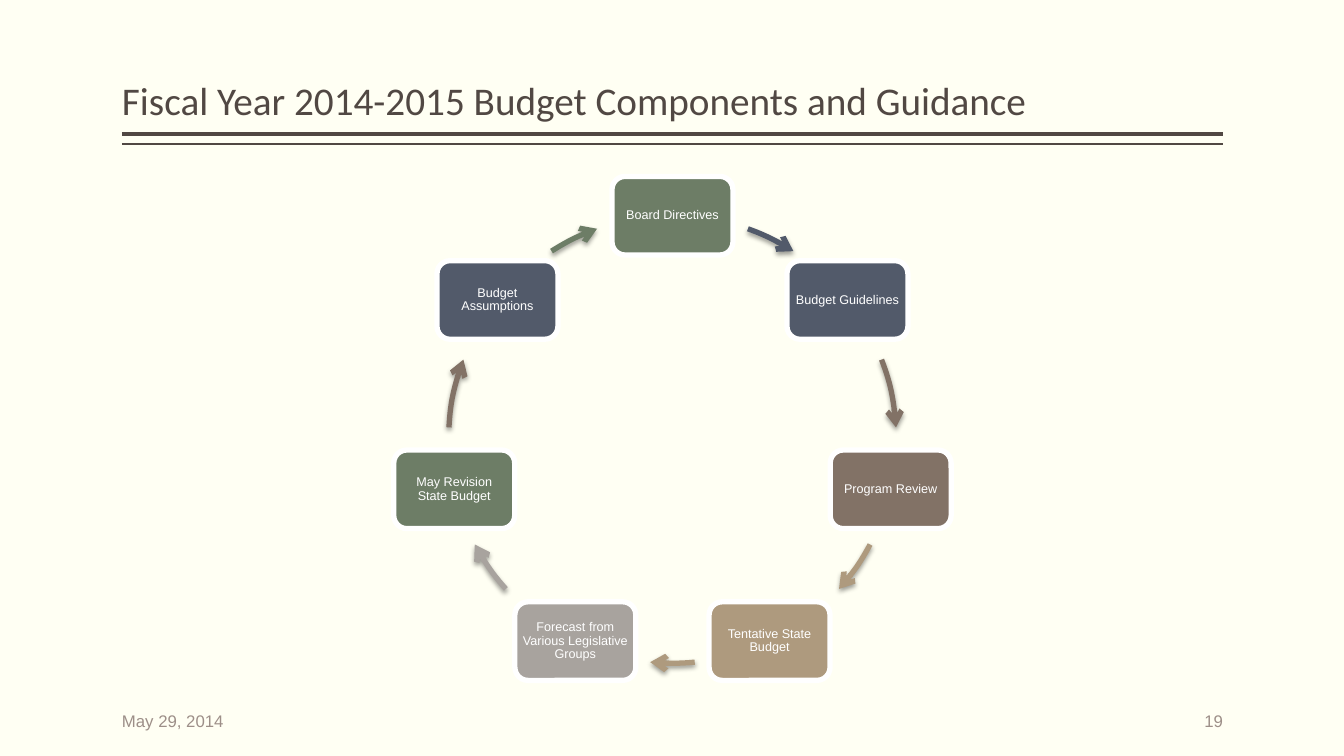
"""Build the budget components slide: a cycle of seven steps joined by arc arrows."""
from dataclasses import dataclass
from math import cos, radians, sin

from lxml import etree
from pptx import Presentation
from pptx.dml.color import RGBColor
from pptx.enum import shapes, text
from pptx.oxml import ns
from pptx.util import Inches, Pt


@dataclass(frozen=True)
class Theme:
    background: str = "FFFFF3"
    dark: str = "514843"
    muted: str = "9D8F88"
    white: str = "FFFFFF"
    shadow: str = "000000"
    green: str = "6D7D66"
    slate: str = "525A6A"
    brown: str = "827266"
    tan: str = "AE9A7E"
    grey: str = "A8A39E"
    heading_font: str = "Calibri"
    body_font: str = "Arial"
    title_size: float = 28
    footer_size: float = 12
    step_size: float = 9
    outline: float = 3.78


theme = Theme()
rgb = RGBColor.from_string


def write(s, words, font, size, color, align, anchor, margins, spacing=None):
    """Put one styled paragraph into a shape."""
    tf = s.text_frame
    tf.word_wrap = True
    tf.vertical_anchor = anchor
    tf.margin_left = tf.margin_right = Inches(margins[0])
    tf.margin_top = tf.margin_bottom = Inches(margins[1])
    p = tf.paragraphs[0]
    p.text = words
    p.alignment = align
    p.line_spacing = spacing
    p.font.name, p.font.size, p.font.color.rgb = font, Pt(size), rgb(color)


def add_sub(parent, tag, **attributes):
    """Append a DrawingML element with attributes."""
    return etree.SubElement(parent, ns.qn(tag), attributes)


prs = Presentation()
prs.slide_width, prs.slide_height = Inches(13.33), Inches(7.5)
slide = prs.slides.add_slide(prs.slide_layouts[6])
slide.background.fill.solid()
slide.background.fill.fore_color.rgb = rgb(theme.background)

left, right = 1.21, 12.13
for y, weight in ((1.33, 3), (1.43, 1)):
    rule = slide.shapes.add_connector(
        shapes.MSO_CONNECTOR.STRAIGHT, Inches(left), Inches(y), Inches(right), Inches(y))
    rule.line.color.rgb = rgb(theme.dark)
    rule.line.width = Pt(weight)
    add_sub(rule._element.spPr, "a:effectLst")

title = slide.shapes.add_textbox(Inches(left), Inches(0.08), Inches(right - left), Inches(1.2))
write(title, "Fiscal Year 2014-2015 Budget Components and Guidance", theme.heading_font,
      theme.title_size, theme.dark, text.PP_ALIGN.LEFT, text.MSO_ANCHOR.BOTTOM, (0, 0.05), 0.9)

center_x, center_y, radius = 6.67, 4.36, 2.22
box_width, box_height = 1.2, 0.78
steps = [
    ("Board Directives", theme.green),
    ("Budget Guidelines", theme.slate),
    ("Program Review", theme.brown),
    ("Tentative State Budget", theme.tan),
    ("Forecast from Various Legislative Groups", theme.grey),
    ("May Revision State Budget", theme.green),
    ("Budget Assumptions", theme.slate),
]
for i, (label, color) in enumerate(steps):
    angle = radians(360 / len(steps) * i)
    x = center_x + radius * sin(angle) - box_width / 2
    y = center_y - radius * cos(angle) - box_height / 2
    box = slide.shapes.add_shape(shapes.MSO_SHAPE.ROUNDED_RECTANGLE, Inches(x), Inches(y),
                                 Inches(box_width), Inches(box_height))
    box.shadow.inherit = False
    box.fill.solid()
    box.fill.fore_color.rgb = rgb(color)
    box.line.color.rgb = rgb(theme.white)
    box.line.width = Pt(theme.outline)
    write(box, label, theme.body_font, theme.step_size, theme.white, text.PP_ALIGN.CENTER,
          text.MSO_ANCHOR.MIDDLE, (0.04, 0.04), 0.9)

right_spans = [(19.7, 32.7), (69.1, 86.9), (118, 131.9)]
left_spans = [(360 - end, 360 - start) for start, end in reversed(right_spans)]
spans = right_spans + [(174.3, 185.7)] + left_spans
arrow_colors = [theme.slate, theme.brown, theme.tan, theme.tan,
                theme.grey, theme.brown, theme.green]
for span, color in zip(spans, arrow_colors):
    arrow = slide.shapes.add_shape(
        shapes.MSO_SHAPE.ARC, Inches(center_x - radius), Inches(center_y - radius),
        Inches(2 * radius), Inches(2 * radius))
    for i, degrees in enumerate(span):
        arrow.adjustments[i] = (degrees - 90) % 360 * 0.6
    arrow.fill.background()
    arrow.line.color.rgb = rgb(color)
    arrow.line.width = Pt(theme.outline)
    add_sub(arrow.line._get_or_add_ln(), "a:tailEnd", type="arrow")
    arrow.shadow.inherit = False
    effects = arrow._element.spPr.find(ns.qn("a:effectLst"))
    shadow = add_sub(effects, "a:outerShdw", blurRad=str(Pt(3.5)), dist=str(Pt(2)),
                     dir="5400000", rotWithShape="0")
    add_sub(add_sub(shadow, "a:srgbClr", val=theme.shadow), "a:alpha", val="38000")

footer_width = 2
for words, x, align in (("May 29, 2014", left, text.PP_ALIGN.LEFT),
                        ("19", right - footer_width, text.PP_ALIGN.RIGHT)):
    footer = slide.shapes.add_textbox(Inches(x), Inches(6.95), Inches(footer_width), Inches(0.4))
    write(footer, words, theme.body_font, theme.footer_size, theme.muted, align,
          text.MSO_ANCHOR.MIDDLE, (0, 0.05))

prs.save("out.pptx")
